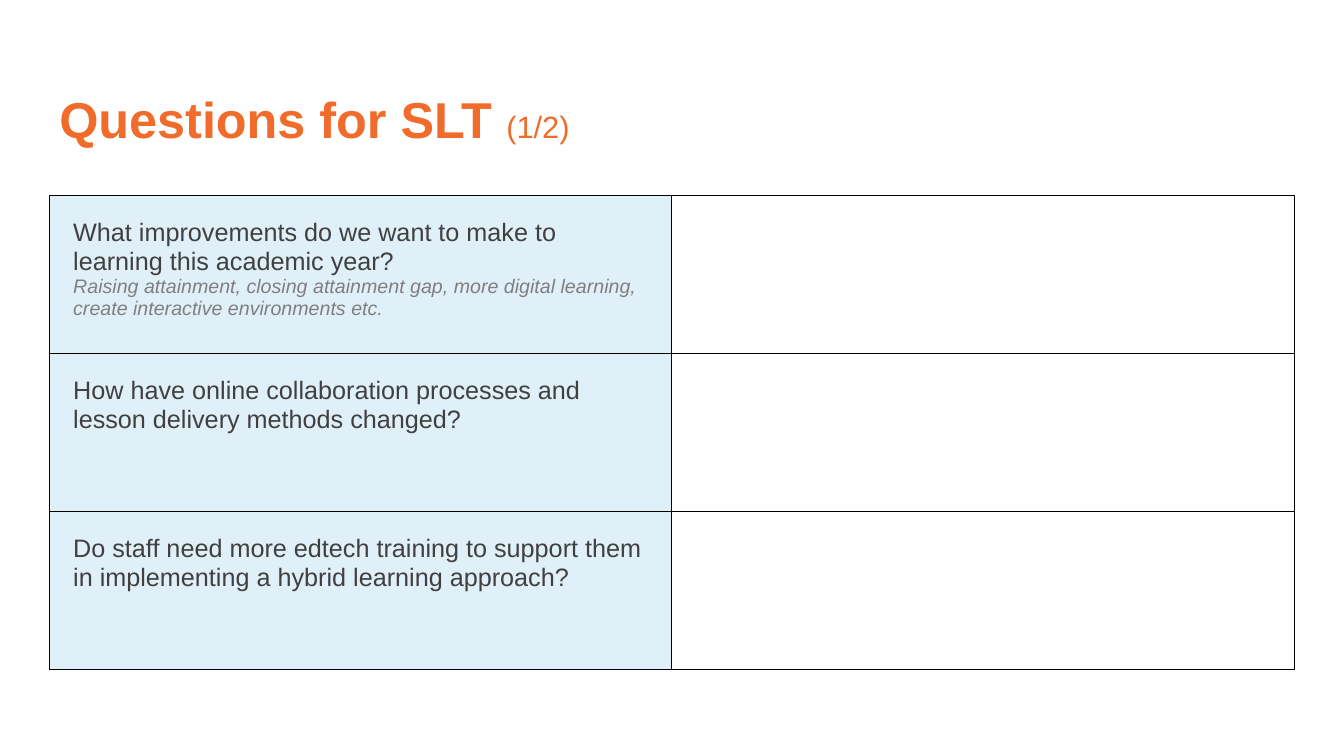
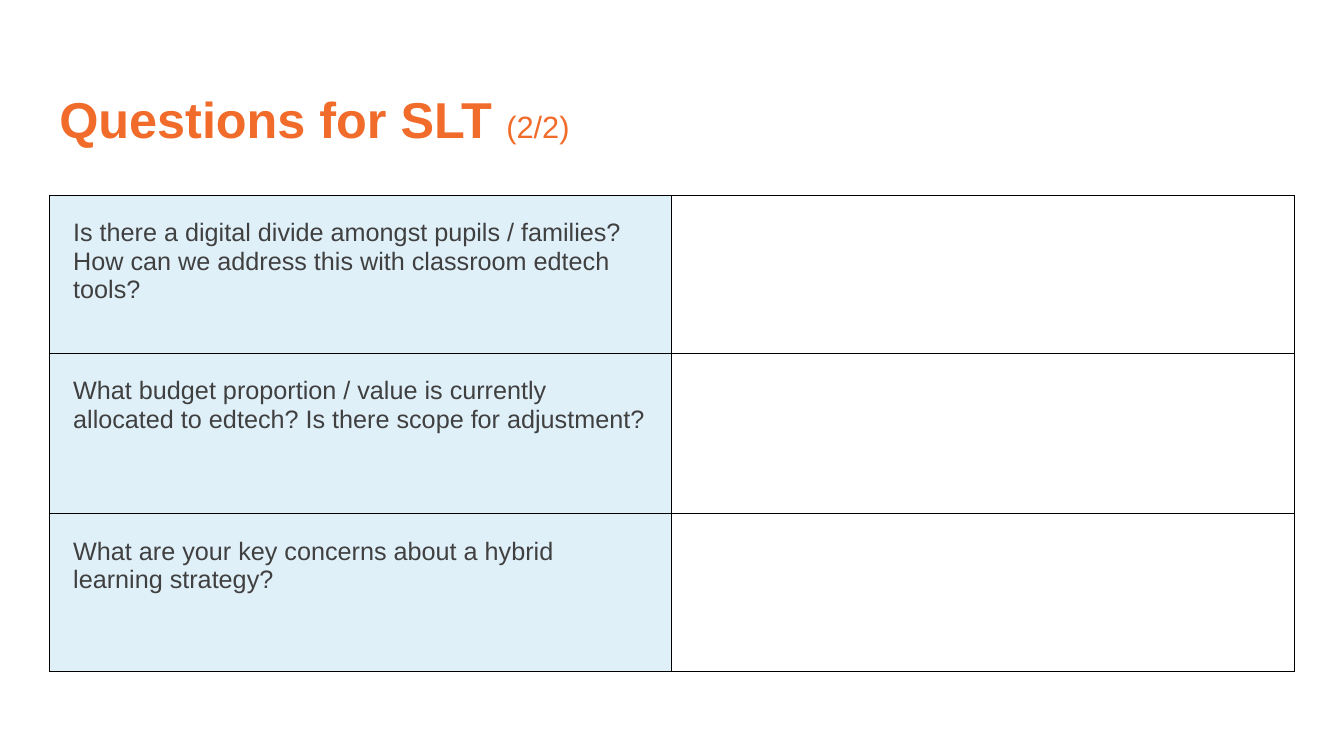
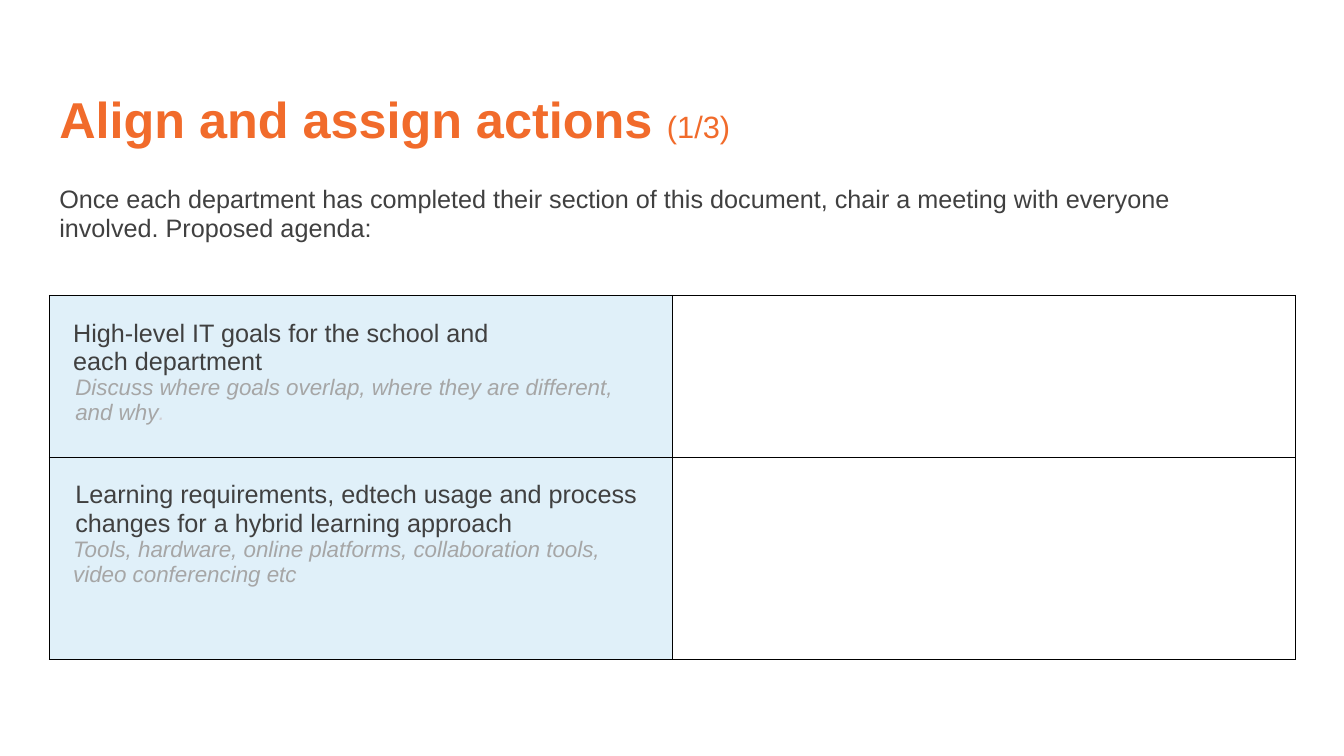
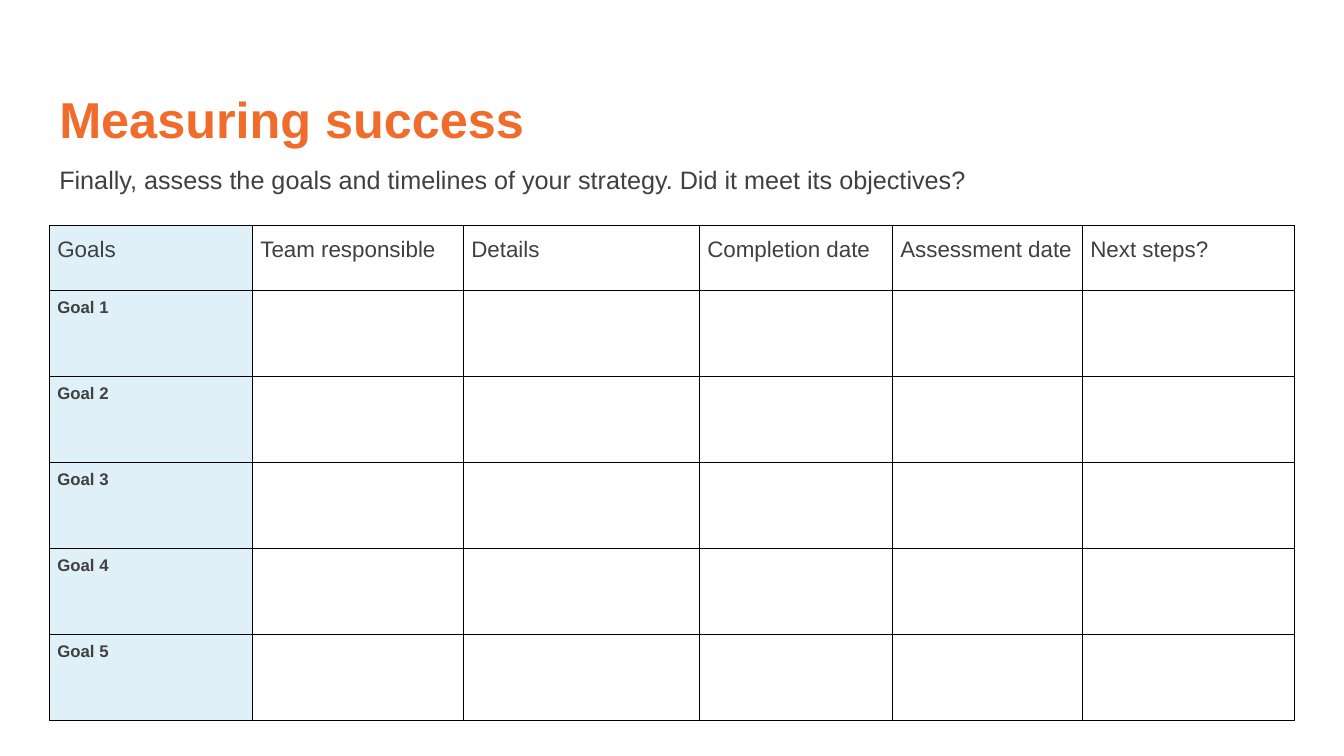
from dataclasses import dataclass

from lxml import etree
from pptx import Presentation
from pptx import util as u
from pptx.dml import color
from pptx.enum import text
from pptx.oxml import ns


@dataclass(frozen=True)
class Theme:
    font: str = "Arial"
    orange: str = "F16B2B"
    dark: str = "404040"
    gray: str = "7F7F7F"
    silver: str = "A6A6A6"
    pale: str = "D2CFD4"
    blue: str = "E0F0F9"
    white: str = "FFFFFF"
    black: str = "000000"
    title: int = 36
    counter: int = 22
    body: int = 18
    heading: int = 16
    example: int = 14
    label: int = 12
    border: float = 0.75


theme = Theme()
styles = {
    "title": (theme.orange, {"size": u.Pt(theme.title), "bold": True}),
    "counter": (theme.orange, {"size": u.Pt(theme.counter)}),
    "body": (theme.dark, {"size": u.Pt(theme.body)}),
    "heading": (theme.dark, {"size": u.Pt(theme.heading)}),
    "example": (theme.gray, {"size": u.Pt(theme.example), "italic": True}),
    "hint": (theme.silver, {"size": u.Pt(theme.heading), "italic": True}),
    "faint": (theme.pale, {"size": u.Pt(theme.heading), "italic": True}),
    "label": (theme.dark, {"size": u.Pt(theme.label), "bold": True}),
}

left = 35.3
text_width = 828
cell_inset = (17, 17, 17, 17)
box_inset = (7.2, 3.6, 7.2, 3.6)
sides = ("left", "top", "right", "bottom")


def write(frame, paragraphs, spacing=None):
    for number, (indent, runs) in enumerate(paragraphs):
        paragraph = frame.add_paragraph() if number else frame.paragraphs[0]
        if indent:
            paragraph._p.get_or_add_pPr().set("marL", str(u.Pt(indent)))
        paragraph.line_spacing = spacing
        for style, words in runs:
            ink, values = styles[style]
            for position, line in enumerate(words.split("\n")):
                if position:
                    paragraph.add_line_break()
                run = paragraph.add_run()
                run.text = line
                run.font.name = theme.font
                run.font.color.rgb = color.RGBColor.from_string(ink)
                for name, value in values.items():
                    setattr(run.font, name, value)


def add_grid(slide, top, widths, heights, contents):
    table = slide.shapes.add_table(
        len(heights), len(widths), u.Pt(left), u.Pt(top), u.Pt(sum(widths)), u.Pt(sum(heights))
    ).table
    table.first_row = table.horz_banding = False
    for column, width in zip(table.columns, widths):
        column.width = u.Pt(width)
    for row, height in zip(table.rows, heights):
        row.height = u.Pt(height)
    for row_number, row in enumerate(table.rows):
        for column_number, cell in enumerate(row.cells):
            properties = cell._tc.get_or_add_tcPr()
            for edge in ("lnL", "lnR", "lnT", "lnB"):
                line = etree.SubElement(properties, ns.qn(f"a:{edge}"), w=str(u.Pt(theme.border)))
                fill = etree.SubElement(line, ns.qn("a:solidFill"))
                etree.SubElement(fill, ns.qn("a:srgbClr"), val=theme.black)
            cell.fill.solid()
            shade = theme.white if column_number else theme.blue
            cell.fill.fore_color.rgb = color.RGBColor.from_string(shade)
            if (row_number, column_number) in contents:
                inset, paragraphs = contents[row_number, column_number]
                for side, value in zip(sides, inset):
                    setattr(cell, f"margin_{side}", u.Pt(value))
                write(cell.text_frame, paragraphs)


question_width = 444.6
row_height = 112.9
questions_top = 139.5
first_questions = [
    [
        (0, [("body", "What improvements do we want to make to learning this academic year?")]),
        (0, [("example", "Raising attainment, closing attainment gap, more digital learning, create interactive environments etc.")]),
    ],
    [(0, [("body", "How have online collaboration processes and lesson delivery methods changed?")])],
    [(0, [("body", "Do staff need more edtech training to support them in implementing a hybrid learning approach?")])],
]
second_questions = [
    [(0, [("body", "Is there a digital divide amongst pupils / families? How can we address this with classroom edtech tools?")])],
    [(0, [("body", "What budget proportion / value is currently allocated to edtech? Is there scope for adjustment?")])],
    [(0, [("body", "What are your key concerns about a hybrid learning strategy?")])],
]
agenda = [
    [
        (0, [("body", "High-level IT goals for the school and\neach department")]),
        (1.5, [("hint", "Discuss where goals overlap, where they are different, and why"), ("faint", ".")]),
    ],
    [
        (1.5, [("body", "Learning requirements, edtech usage and process changes for a hybrid learning approach")]),
        (0, [("hint", "Tools, hardware, online platforms, collaboration tools, video conferencing etc")]),
    ],
]
headings = ["Goals", "Team responsible", "Details", "Completion date", "Assessment date", "Next steps?"]
goal_count = 5
goal_cells = {
    (0, number): ((5.7, 8.5, 5.7, 7.2), [(0, [("heading", heading)])])
    for number, heading in enumerate(headings)
}
for number in range(1, goal_count + 1):
    goal_cells[number, 0] = ((5.7, 5.7, 5.7, 5.7), [(0, [("label", f"Goal {number}")])])

question_columns = [question_width] * 2
pages = [
    ("Questions for SLT", " (1/2)", None, questions_top, question_columns, [row_height] * 3, first_questions),
    ("Questions for SLT", " (2/2)", None, questions_top, question_columns, [row_height, 114.4, row_height], second_questions),
    (
        "Align and assign actions", " (1/3)",
        (128.9, 46, 0.95, "Once each department has completed their section of this document, chair a meeting with everyone involved. Proposed agenda:"),
        211, [445] * 2, [row_height, 144.8], agenda,
    ),
    (
        "Measuring success", "",
        (116.6, 23, 0.9, "Finally, assess the goals and timelines of your strategy. Did it meet its objectives?"),
        160.8, [145, 150.7, 168.6, 137.9, 135.7, 151.4], [46.8] + [61.4] * goal_count, goal_cells,
    ),
]

presentation = Presentation()
presentation.slide_width = u.Pt(960)
presentation.slide_height = u.Pt(540)

for title, counter, intro, top, widths, heights, contents in pages:
    slide = presentation.slides.add_slide(presentation.slide_layouts[6])
    title_runs = [("title", title)]
    if counter:
        title_runs = [("title", title + " "), ("counter", counter.strip())]
    boxes = [(35.3, 104.4, 0.9, text.MSO_ANCHOR.MIDDLE, title_runs)]
    if intro:
        box_top, box_height, spacing, words = intro
        boxes.append((box_top, box_height, spacing, text.MSO_ANCHOR.TOP, [("body", words)]))
    for box_top, box_height, spacing, anchor, runs in boxes:
        shape = slide.shapes.add_textbox(u.Pt(left), u.Pt(box_top), u.Pt(text_width), u.Pt(box_height))
        frame = shape.text_frame
        frame.word_wrap = True
        frame.vertical_anchor = anchor
        for side, value in zip(sides, box_inset):
            setattr(frame, f"margin_{side}", u.Pt(value))
        write(frame, [(0, runs)], spacing)
    if isinstance(contents, list):
        contents = {(number, 0): (cell_inset, paragraphs) for number, paragraphs in enumerate(contents)}
    add_grid(slide, top, widths, heights, contents)

presentation.save("out.pptx")
